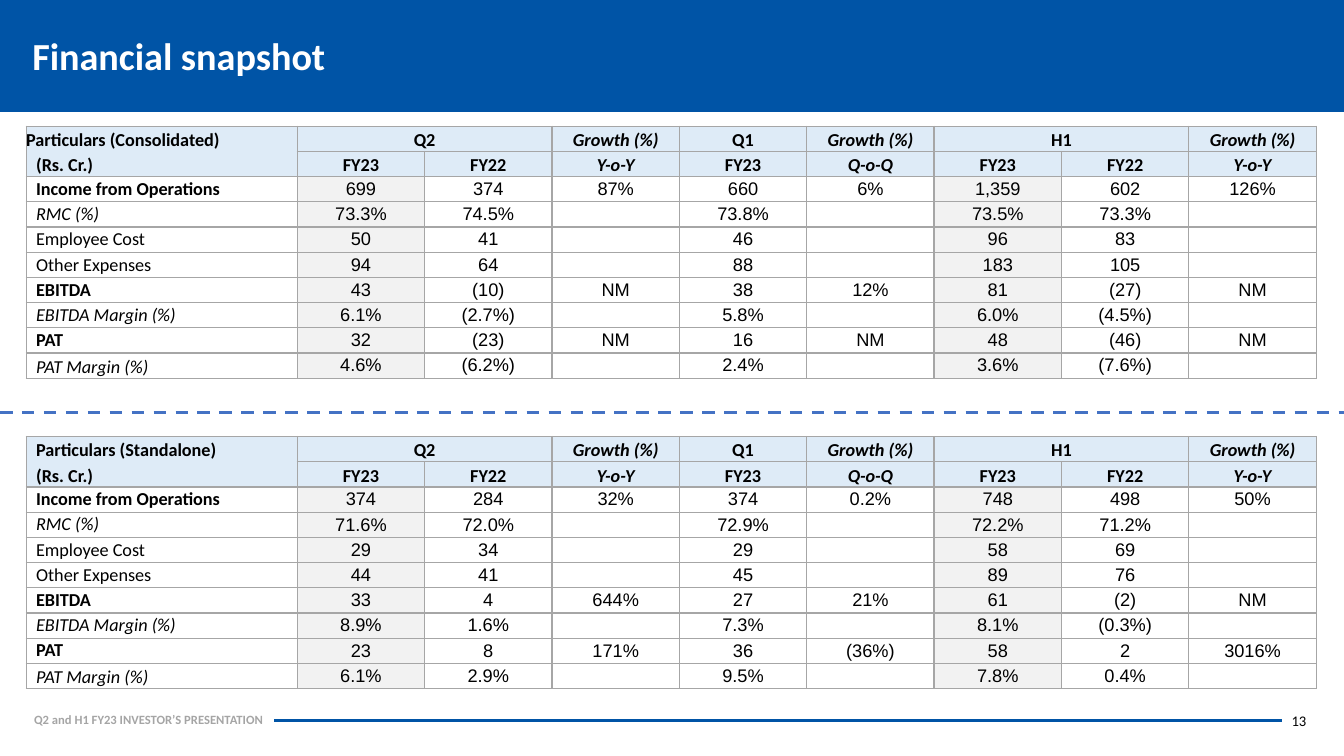
from dataclasses import dataclass

from lxml import etree
from pptx import Presentation
from pptx.dml.color import RGBColor
from pptx.enum.dml import MSO_LINE
from pptx.enum.shapes import MSO_CONNECTOR, MSO_SHAPE
from pptx.enum.text import MSO_ANCHOR, PP_ALIGN
from pptx.oxml.ns import qn
from pptx.util import Cm, Pt

LEFT, MID, RIGHT = PP_ALIGN.LEFT, PP_ALIGN.CENTER, PP_ALIGN.RIGHT
CENTRE, BASE = MSO_ANCHOR.MIDDLE, MSO_ANCHOR.BOTTOM
RECT, LINE, DASH = MSO_SHAPE.RECTANGLE, MSO_CONNECTOR.STRAIGHT, MSO_LINE.DASH

BLUE, RULE, GREY = "0054A6", "4472C4", "A6A6A6"
HEAD, SHADE = "DEEBF7", "F2F2F2"
WIDE, HIGH = 33.87, 19.05
FIRST, REST, DEEP = 6.83, 3.21, 6.35  # label column, value column, table height
PAD = 0.25  # indent of the row labels


@dataclass
class Label:
    text: str
    bold: bool = False
    italic: bool = False
    anchor: MSO_ANCHOR = CENTRE


@dataclass
class Panel:
    name: str
    top: float
    indent: float
    rows: list[str]


LABELS = [
    Label("Income from Operations", bold=True),
    Label("RMC (%)", italic=True),
    Label("Employee Cost"),
    Label("Other Expenses"),
    Label("EBITDA", bold=True),
    Label("EBITDA Margin (%)", italic=True),
    Label("PAT", bold=True),
    Label("PAT Margin (%)", italic=True, anchor=BASE),
]
HEADS = [
    "Q2||Growth (%)|Q1|Growth (%)|H1||Growth (%)",
    "FY23|FY22|Y-o-Y|FY23|Q-o-Q|FY23|FY22|Y-o-Y",
]
GROWTH = (3, 5, 8)
CURRENT = (1, 6)  # shaded columns, which also start the merged heads

PANELS = [
    Panel("Particulars (Consolidated)", 3.18, 0, [
        "699|374|87%|660|6%|1,359|602|126%",
        "73.3%|74.5%||73.8%||73.5%|73.3%|",
        "50|41||46||96|83|",
        "94|64||88||183|105|",
        "43|(10)|NM|38|12%|81|(27)|NM",
        "6.1%|(2.7%)||5.8%||6.0%|(4.5%)|",
        "32|(23)|NM|16|NM|48|(46)|NM",
        "4.6%|(6.2%)||2.4%||3.6%|(7.6%)|",
    ]),
    Panel("Particulars (Standalone)", 11, PAD, [
        "374|284|32%|374|0.2%|748|498|50%",
        "71.6%|72.0%||72.9%||72.2%|71.2%|",
        "29|34||29||58|69|",
        "44|41||45||89|76|",
        "33|4|644%|27|21%|61|(2)|NM",
        "8.9%|1.6%||7.3%||8.1%|(0.3%)|",
        "23|8|171%|36|(36%)|58|2|3016%",
        "6.1%|2.9%||9.5%||7.8%|0.4%|",
    ]),
]


def rgb(code: str) -> RGBColor:
    return RGBColor.from_string(code)


def write(frame, text: str, *, size: float = 13, face: str = "Calibri",
          color: str = "000000", bold: bool = False, italic: bool = False,
          align: PP_ALIGN = LEFT) -> None:
    para = frame.paragraphs[0]
    para.alignment = align
    if not text:
        # An empty cell keeps the row height through its end mark
        etree.SubElement(para._p, qn("a:endParaRPr"), sz=str(int(size * 100)))
        return
    run = para.add_run()
    run.text = text
    font = run.font
    font.size, font.name = Pt(size), face
    font.bold, font.italic = bold, italic
    font.color.rgb = rgb(color)


def box(slide, text: str, x: float, y: float, w: float, h: float, **form) -> None:
    frame = slide.shapes.add_textbox(Cm(x), Cm(y), Cm(w), Cm(h)).text_frame
    frame.word_wrap = True
    write(frame, text, **form)


def rule(slide, x: float, end: float, y: float, color: str, dash=None) -> None:
    line = slide.shapes.add_connector(LINE, Cm(x), Cm(y), Cm(end), Cm(y))
    line.line.color.rgb = rgb(color)
    line.line.width = Pt(2.25)
    if dash:
        line.line.dash_style = dash
    etree.SubElement(line._element.spPr, qn("a:effectLst"))


def edge(cell, sides: str) -> None:
    props = cell._tc.get_or_add_tcPr()
    for side in "LRTB":
        line = etree.SubElement(props, qn(f"a:ln{side}"), w=str(Pt(1)))
        if side in sides:
            fill = etree.SubElement(line, qn("a:solidFill"))
            etree.SubElement(fill, qn("a:srgbClr"), val=GREY)
        else:
            etree.SubElement(line, qn("a:noFill"))


def fill(cell, text: str, *, back: str = "", sides: str = "LRTB",
         indent: float = 0, anchor: MSO_ANCHOR = CENTRE, **form) -> None:
    cell.margin_left = Cm(indent)
    cell.margin_right = cell.margin_top = cell.margin_bottom = 0
    cell.vertical_anchor = anchor
    edge(cell, sides)
    if back:
        cell.fill.solid()
        cell.fill.fore_color.rgb = rgb(back)
    else:
        cell.fill.background()
    write(cell.text_frame, text, **form)


def draw(slide, panel: Panel) -> None:
    count = len(HEADS) + len(LABELS)
    table = slide.shapes.add_table(count, 9, Cm(0.66), Cm(panel.top),
                                   Cm(FIRST + 8 * REST), Cm(DEEP)).table
    table.first_row = table.horz_banding = False
    for n, col in enumerate(table.columns):
        col.width = Cm(REST if n else FIRST)
    for row in table.rows:
        row.height = Cm(DEEP / count)

    # Two head rows, open between the two label cells
    for n, (text, indent, sides) in enumerate(
            [(panel.name, panel.indent, "LRT"), ("(Rs. Cr.)", PAD, "LRB")]):
        fill(table.cell(n, 0), text, back=HEAD, sides=sides, indent=indent,
             anchor=BASE, bold=True)
        for c, head in enumerate(HEADS[n].split("|"), 1):
            fill(table.cell(n, c), head, back=HEAD, anchor=BASE, bold=True,
                 italic=c in GROWTH, align=MID)
    for c in CURRENT:
        table.cell(0, c).merge(table.cell(0, c + 1))

    # Figures
    for n, (label, row) in enumerate(zip(LABELS, panel.rows), len(HEADS)):
        fill(table.cell(n, 0), label.text, indent=PAD, anchor=label.anchor,
             bold=label.bold, italic=label.italic)
        for c, value in enumerate(row.split("|"), 1):
            fill(table.cell(n, c), value, back=SHADE if c in CURRENT else "",
                 face="Arial", align=MID)


def main() -> None:
    deck = Presentation()
    deck.slide_width, deck.slide_height = Cm(WIDE), Cm(HIGH)
    slide = deck.slides.add_slide(deck.slide_layouts[5])

    # Title on a blue band, with the band sent to the back
    band = slide.shapes.add_shape(RECT, 0, 0, Cm(WIDE), Cm(2.82))
    band.shadow.inherit = False
    band.fill.solid()
    band.fill.fore_color.rgb = rgb(BLUE)
    band.line.fill.background()
    slide.shapes._spTree.insert(2, band._element)
    title = slide.shapes.title
    title.left, title.top = Cm(0.56), Cm(0.38)
    title.width, title.height = Cm(27.6), Cm(2.18)
    title.text_frame.vertical_anchor = CENTRE
    write(title.text_frame, "Financial snapshot", size=27.3, color="FFFFFF", bold=True)
    title.text_frame.paragraphs[0].line_spacing = 0.9

    # Tables and the divider
    rule(slide, 0, WIDE, 10.39, RULE, DASH)
    for panel in PANELS:
        draw(slide, panel)

    # Footer
    box(slide, "Q2 and H1 FY23 INVESTOR’S PRESENTATION", 0.61, 17.81, 8.97, 0.64,
        size=9, color="A5A5A5", bold=True)
    box(slide, "13", 27.1, 17.81, 6.07, 0.71, size=10.5, align=RIGHT)
    rule(slide, 6.91, 32.31, 18.16, BLUE)

    deck.save("out.pptx")


if __name__ == "__main__":
    main()
